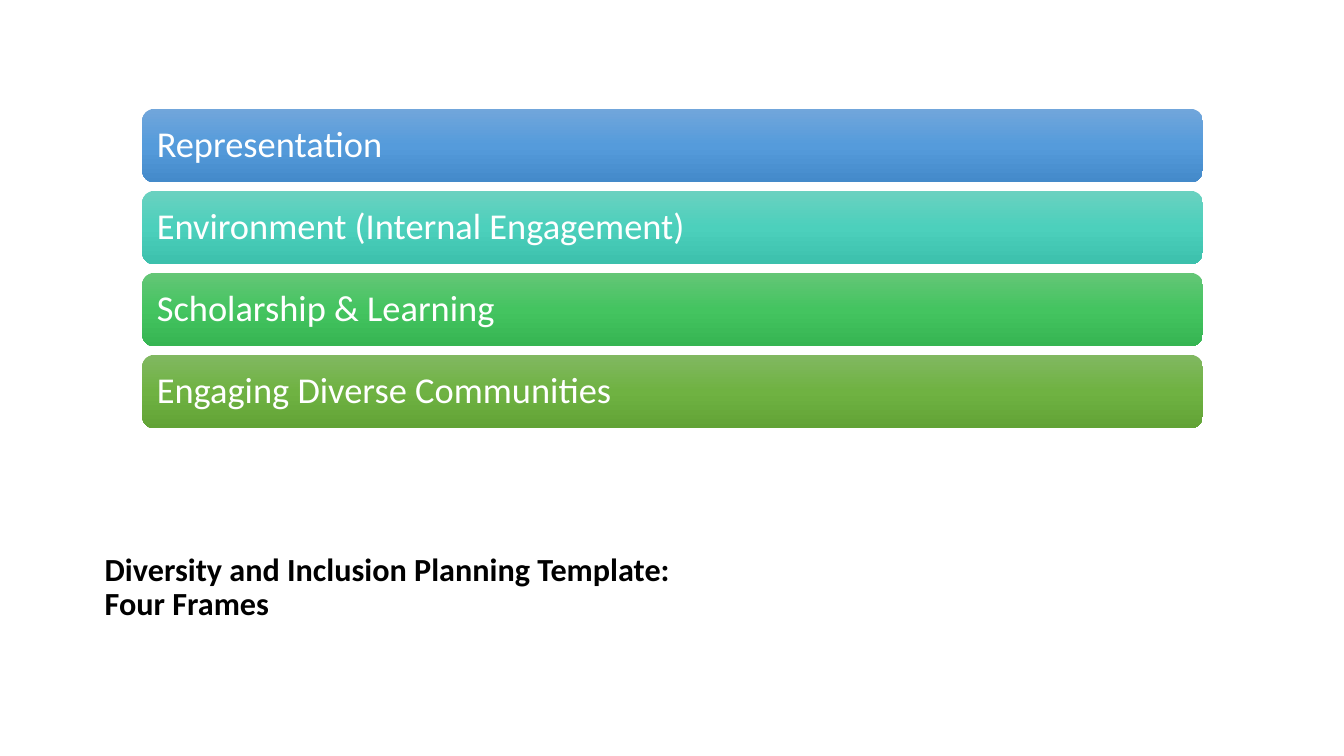
from copy import deepcopy
from dataclasses import dataclass

from pptx import Presentation
from pptx.dml.color import RGBColor
from pptx.enum.shapes import MSO_SHAPE as Shape
from pptx.enum.text import MSO_ANCHOR as Anchor, PP_ALIGN as Align
from pptx.oxml.ns import qn
from pptx.slide import Slide
from pptx.text.text import TextFrame
from pptx.util import Inches, Pt

COLORS = {
    "title": "000000",
    "bar_text": "FFFFFF",
    "blue": ("71A6DB", "559BDB", "448ACA"),
    "teal": ("6AD1C0", "4CD0BC", "3CC0AC"),
    "green": ("64C677", "44C460", "36B552"),
    "olive": ("81B861", "6FB242", "62A336"),
}
FONT = "Calibri"
BAR_LEFT, BAR_WIDTH, BAR_HEIGHT = 1.41, 10.52, 0.73
FIRST_TOP, LAST_TOP = 1.08, 3.52
BAR_INSET = 0.11


@dataclass(frozen=True)
class Frame:
    label: str
    gradient: str


FRAMES = [
    Frame("Representation", "blue"),
    Frame("Environment (Internal Engagement)", "teal"),
    Frame("Scholarship & Learning", "green"),
    Frame("Engaging Diverse Communities", "olive"),
]


def write_text(text_frame: TextFrame, text: str, size: float, color: str,
               bold: bool = False, line_spacing: float = 1.0) -> None:
    text_frame.word_wrap = True
    text_frame.vertical_anchor = Anchor.MIDDLE
    text_frame.text = text
    paragraph = text_frame.paragraphs[0]
    paragraph.alignment = Align.LEFT
    paragraph.line_spacing = line_spacing
    for run in paragraph.runs:
        run.font.name = FONT
        run.font.size = Pt(size)
        run.font.bold = bold
        run.font.color.rgb = RGBColor.from_string(color)


def fill_gradient(shape, colors: tuple[str, ...]) -> None:
    """Fill the shape from top to bottom with evenly spaced colours."""
    shape.fill.gradient()
    shape.fill.gradient_angle = 270
    stop_list = shape.element.spPr.find(qn("a:gradFill")).find(qn("a:gsLst"))
    while len(stop_list) < len(colors):
        stop_list.append(deepcopy(stop_list[0]))
    for index, (stop, color) in enumerate(zip(shape.fill.gradient_stops, colors)):
        stop.position = index / (len(colors) - 1)
        stop.color.rgb = RGBColor.from_string(color)


def add_bar(slide: Slide, frame: Frame, top: float) -> None:
    bar = slide.shapes.add_shape(
        Shape.ROUNDED_RECTANGLE, Inches(BAR_LEFT), Inches(top),
        Inches(BAR_WIDTH), Inches(BAR_HEIGHT))
    bar.shadow.inherit = False
    bar.line.fill.background()
    fill_gradient(bar, COLORS[frame.gradient])
    text_frame = bar.text_frame
    text_frame.margin_left = text_frame.margin_right = Inches(BAR_INSET)
    text_frame.margin_top = text_frame.margin_bottom = Inches(BAR_INSET)
    write_text(text_frame, frame.label, 26, COLORS["bar_text"], line_spacing=0.9)


def add_title(slide: Slide) -> None:
    title = slide.shapes.add_textbox(
        Inches(0.94), Inches(5.42), Inches(11.33), Inches(0.83))
    write_text(title.text_frame,
               "Diversity and Inclusion Planning Template:\vFour Frames",
               23, COLORS["title"], bold=True, line_spacing=0.9)


def main() -> None:
    presentation = Presentation()
    presentation.slide_width = Inches(13.33)
    presentation.slide_height = Inches(7.5)
    slide = presentation.slides.add_slide(presentation.slide_layouts[6])
    add_title(slide)
    pitch = (LAST_TOP - FIRST_TOP) / (len(FRAMES) - 1)
    for index, frame in enumerate(FRAMES):
        add_bar(slide, frame, FIRST_TOP + index * pitch)
    presentation.save("out.pptx")


if __name__ == "__main__":
    main()
